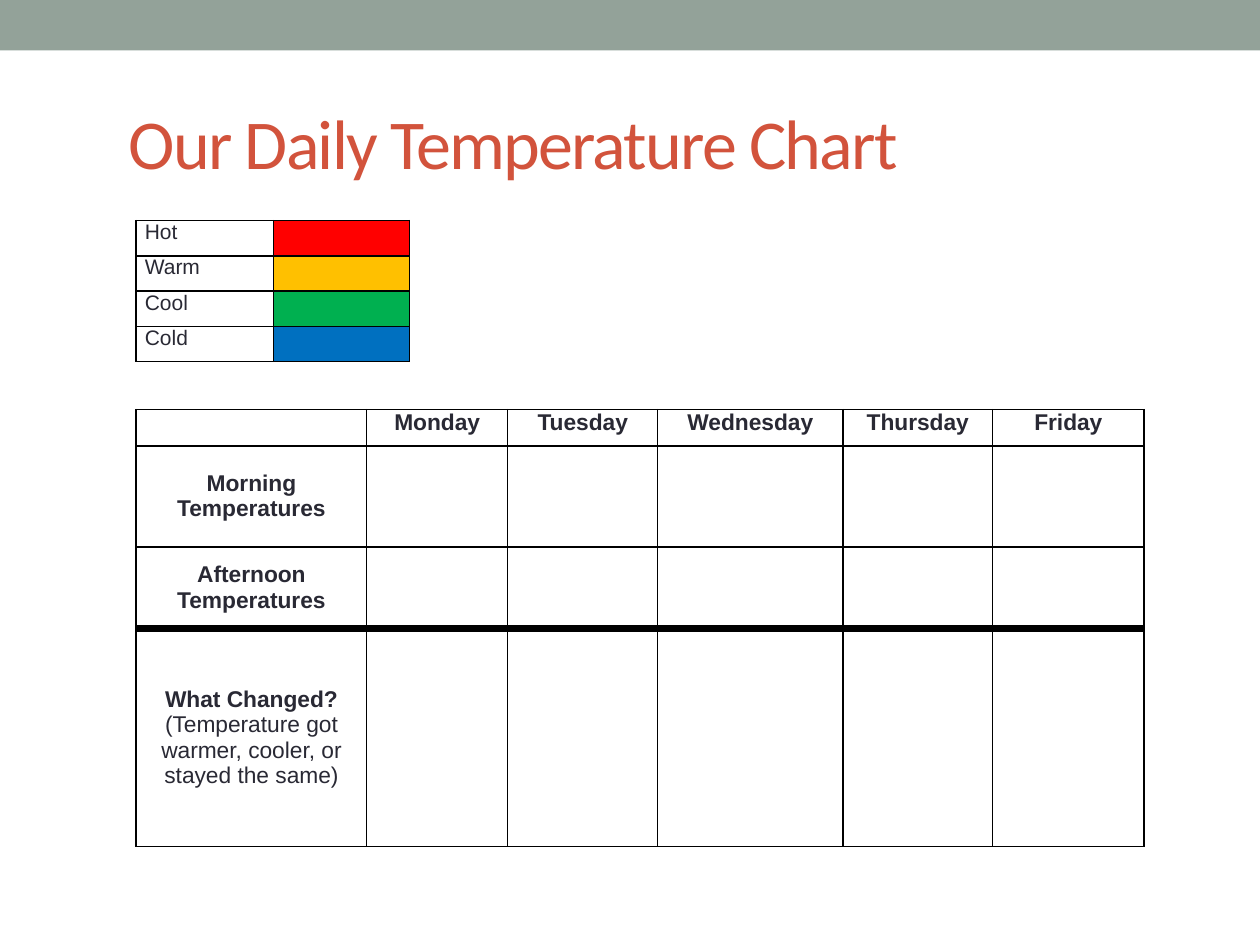
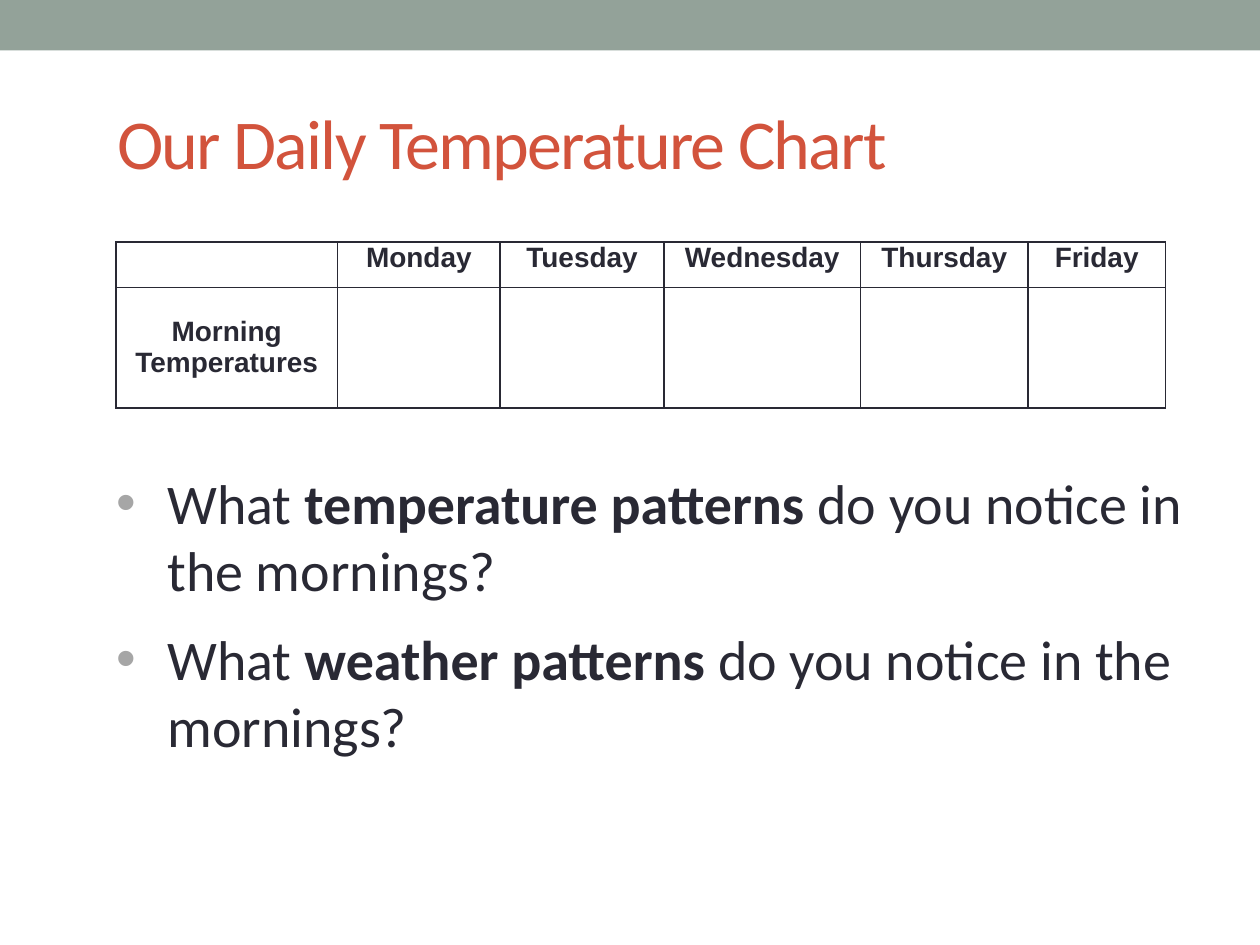
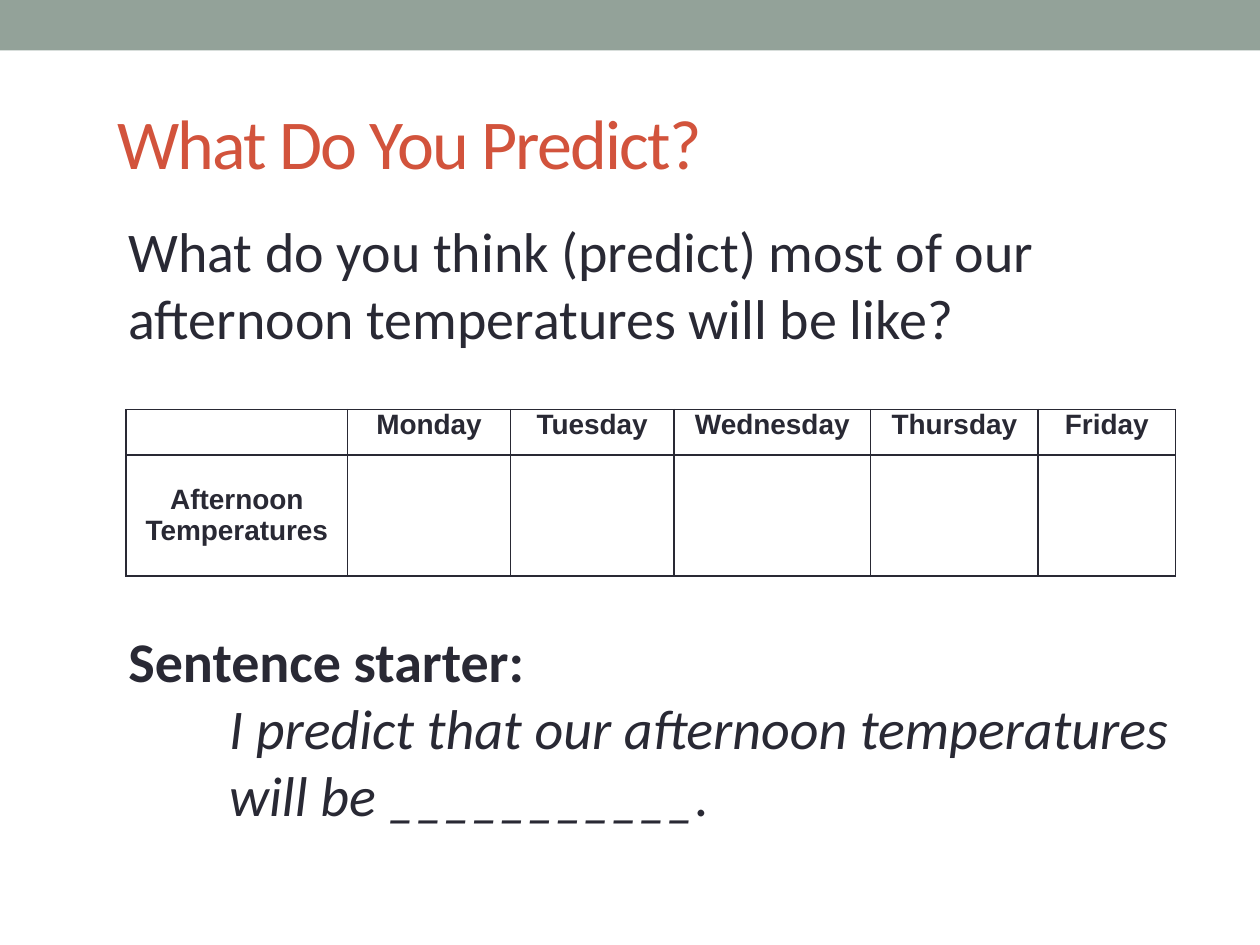
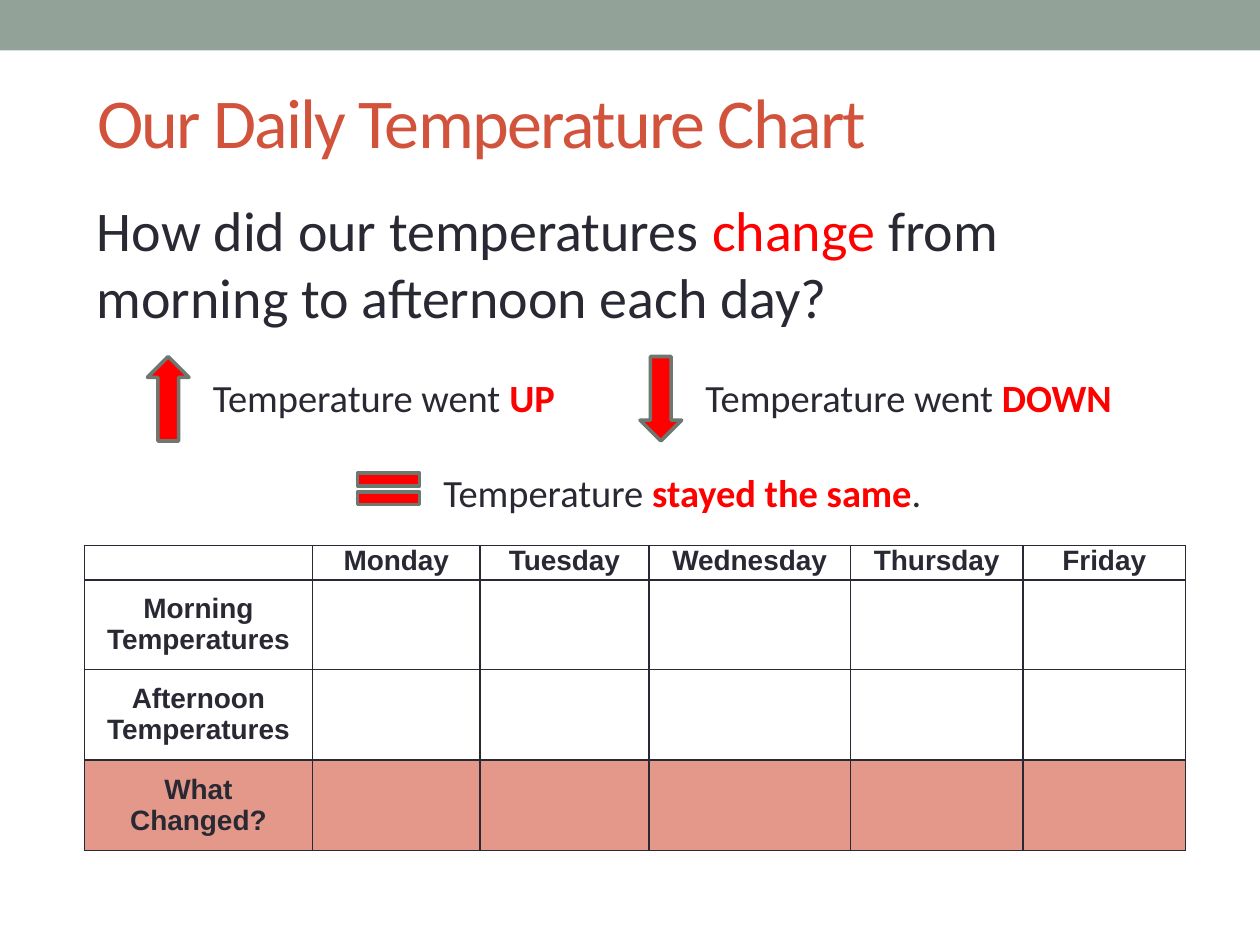
from pptx import Presentation
from pptx.dml.color import RGBColor
from pptx.enum.shapes import MSO_SHAPE as Preset
from pptx.enum.text import MSO_ANCHOR as Anchor, MSO_AUTO_SIZE as AutoSize, PP_ALIGN as Align
from pptx.oxml.ns import qn
from pptx.util import Emu, Pt
from lxml.etree import SubElement

SCALE = 9144  # EMU per px, at 100 px to the inch
COLORS = {
    "band": "93A299", "title": "D2533C", "text": "292934", "bullet": "A6A6A6",
    "accent": "FF0000", "outline": "6D7871", "black": "000000", "changed": "E4988A",
    "hot": "FF0000", "warm": "FFC000", "cool": "00B050", "cold": "0070C0",
}
DAYS = ["Monday", "Tuesday", "Wednesday", "Thursday", "Friday"]
MORNING, AFTERNOON, CHANGED = "Morning Temperatures", "Afternoon Temperatures", "What Changed?"
BOLD = {"bold": True}
ACCENT = {"color": "accent"}
STRONG = {**BOLD, **ACCENT}


def px(length):
    return Emu(length * SCALE)


def rgb(name):
    return RGBColor.from_string(COLORS[name])


def apply(target, formats):
    for name, value in formats.items():
        setattr(target, name, value)


class Deck:
    """Holds the shared style and the slide being built."""

    body = {"name": "Calibri", "size": 32, "color": "text"}
    label = {**body, "size": 22}
    cell = {"name": "Arial", "size": 16, "color": "text"}

    def __init__(self):
        self.presentation = Presentation()
        apply(self.presentation, {"slide_width": px(1000), "slide_height": px(750)})
        self.slide = None

    def new_slide(self, title, left, top=58):
        layout = self.presentation.slide_layouts.get_by_name("Title Only")
        self.slide = self.presentation.slides.add_slide(layout)
        self.shape(Preset.RECTANGLE, (0, 0, 1000, 40), "band")
        holder = self.slide.shapes.title
        apply(holder, dict(left=px(left), top=px(top), width=px(950 - left), height=px(108)))
        apply(holder.text_frame, {"vertical_anchor": Anchor.MIDDLE, "auto_size": AutoSize.NONE,
                                  "word_wrap": True})
        self.add_runs(holder.text_frame, [title], {**self.body, "size": 40, "color": "title"},
                      {"alignment": Align.LEFT})
        holder.text_frame.paragraphs[0].runs[0].font._element.set("spc", "-100")

    def shape(self, preset, box, fill, line=None, rotation=0):
        shape = self.slide.shapes.add_shape(preset, *map(px, box))
        shape.shadow.inherit = False
        shape.rotation = rotation
        shape.fill.solid()
        shape.fill.fore_color.rgb = rgb(fill)
        if line:
            shape.line.color.rgb = rgb(line)
            shape.line.width = Pt(2.08)
        else:
            shape.line.fill.background()

    def add_runs(self, frame, paragraphs, style, layout=None):
        """A paragraph is a string or a list of (text, format changes) pairs."""
        for index, parts in enumerate(paragraphs):
            paragraph = frame.add_paragraph() if index else frame.paragraphs[0]
            apply(paragraph, layout or {})
            for text, changes in [(parts, {})] if isinstance(parts, str) else parts:
                run = paragraph.add_run()
                run.text = text
                formats = {**style, **changes}
                run.font.color.rgb = rgb(formats.pop("color"))
                apply(run.font, {**formats, "size": Pt(formats["size"])})

    def text(self, box, paragraphs, style=None, layout=None):
        frame = self.slide.shapes.add_textbox(*map(px, box)).text_frame
        frame.word_wrap = True
        self.add_runs(frame, paragraphs, style or self.body, layout)
        return frame.paragraphs

    def indent(self, paragraph, margin, first=0):
        properties = paragraph._p.get_or_add_pPr()
        properties.set("marL", str(px(margin)))
        properties.set("indent", str(px(first)))
        return properties

    def bullets(self, box, paragraphs):
        for paragraph in self.text(box, paragraphs, layout={"space_before": Pt(12)}):
            properties = self.indent(paragraph, 40, -40)
            color = SubElement(properties, qn("a:buClr"))
            SubElement(color, qn("a:srgbClr"), val=COLORS["bullet"])
            SubElement(properties, qn("a:buFont"), typeface="Arial")
            SubElement(properties, qn("a:buChar"), char="•")

    def borders(self, cell, color, thick_side):
        properties = cell._tc.get_or_add_tcPr()
        for side in "LRTB":
            width = Pt(4.5 if side == thick_side else 1)
            line = SubElement(properties, qn(f"a:ln{side}"), w=str(width))
            fill = SubElement(line, qn("a:solidFill"))
            SubElement(fill, qn("a:srgbClr"), val=COLORS[color])

    def table(self, corner, columns, heights, cells, size, line, fills=None,
              align=Align.CENTER, bold=True, thick_after=None):
        """Each cell is a list of paragraphs; fills maps (row, column) to a colour."""
        box = (*corner, sum(columns), sum(heights))
        table = self.slide.shapes.add_table(len(heights), len(columns), *map(px, box)).table
        apply(table, {"first_row": False, "horz_banding": False})
        for column, width in zip(table.columns, columns):
            column.width = px(width)
        for row, height in zip(table.rows, heights):
            row.height = px(height)
        margins = dict(margin_left=px(7), margin_right=px(7), margin_top=0, margin_bottom=0)
        thick_sides = {} if thick_after is None else {thick_after: "B", thick_after + 1: "T"}
        for r, row in enumerate(cells):
            for c, paragraphs in enumerate(row):
                cell = table.cell(r, c)
                anchor = Anchor.MIDDLE if r and bold else Anchor.TOP
                apply(cell, {**margins, "vertical_anchor": anchor})
                self.borders(cell, line, thick_sides.get(r))
                fill = (fills or {}).get((r, c))
                if fill:
                    cell.fill.solid()
                    cell.fill.fore_color.rgb = rgb(fill)
                else:
                    cell.fill.background()
                style = {**self.cell, "size": size, "bold": bold}
                self.add_runs(cell.text_frame, paragraphs, style, {"alignment": align})
                if not paragraphs:  # keeps short rows from growing
                    end = cell.text_frame.paragraphs[0]._p.get_or_add_endParaRPr()
                    end.set("sz", str(size * 100))

    def week(self, corner, columns, heights, labels, size=16, line="text", **options):
        cells = [[[]] + [[day] for day in DAYS]]
        cells += [[label] + [[] for _ in DAYS] for label in labels]
        self.table(corner, columns, heights, cells, size, line, **options)


def main():
    deck = Deck()
    chart_title = "Our Daily Temperature Chart"
    one_row = {"columns": [176, 129, 130, 156, 133, 109], "heights": [36, 96]}

    # Blank chart with colour key
    deck.new_slide(chart_title, 92)
    explanation = [("(Temperature got warmer, cooler, or stayed the same)", {"bold": False})]
    deck.week((108, 325), [183, 112, 119, 147, 119, 120], [29, 80, 65, 173],
              [[MORNING], [AFTERNOON], [CHANGED, explanation]],
              size=13, line="black", thick_after=2)
    key = ["Hot", "Warm", "Cool", "Cold"]
    deck.table((108, 175), [109, 108], [28] * len(key), [[[name], []] for name in key],
               12, "black", {(r, 1): name.lower() for r, name in enumerate(key)},
               align=Align.LEFT, bold=False)

    # Morning patterns
    deck.new_slide(chart_title, 83)
    deck.week((92, 192), labels=[[MORNING]], **one_row)
    deck.bullets((83, 367, 900, 242), [
        [("What ", {}), (f"{topic} patterns ", BOLD), ("do you notice in the mornings?", {})]
        for topic in ("temperature", "weather")])

    # Afternoon prediction
    deck.new_slide("What Do You Predict?", 83)
    deck.week((100, 325), labels=[[AFTERNOON]], **one_row)
    deck.text((92, 167, 850, 300), [
        "What do you think (predict) most of our afternoon temperatures will be like?"])
    starter = deck.text((92, 492, 858, 172), [
        [("Sentence starter:", BOLD)],
        [("I predict that our afternoon temperatures will be ___________.", {"italic": True})]])
    deck.indent(starter[1], 80)

    # Change from morning to afternoon
    deck.new_slide(chart_title, 67, 42)
    deck.week((67, 433), [181, 133, 134, 160, 137, 129], [27, 71, 72, 72],
              [[MORNING], [AFTERNOON], [CHANGED]],
              fills={(3, c): "changed" for c in range(len(DAYS) + 1)})
    deck.text((67, 150, 867, 118), [
        [("How did our temperatures ", {}), ("change", ACCENT),
         (" from morning to afternoon each day?", {})]])
    for left, width, rotation, direction in ((117, 308, 180, "UP"), (508, 358, 0, "DOWN")):
        deck.shape(Preset.DOWN_ARROW, (left, 283, 33, 67), "accent", "outline", rotation)
        deck.text((left + 42, 292, width, 47),
                  [[("Temperature went ", {}), (direction, STRONG)]], deck.label)
    deck.shape(Preset.MATH_EQUAL, (275, 367, 67, 42), "accent", "outline")
    deck.text((342, 367, 442, 47),
              [[("Temperature ", {}), ("stayed the same", STRONG), (".", {})]], deck.label)

    deck.presentation.save("out.pptx")


if __name__ == "__main__":
    main()
